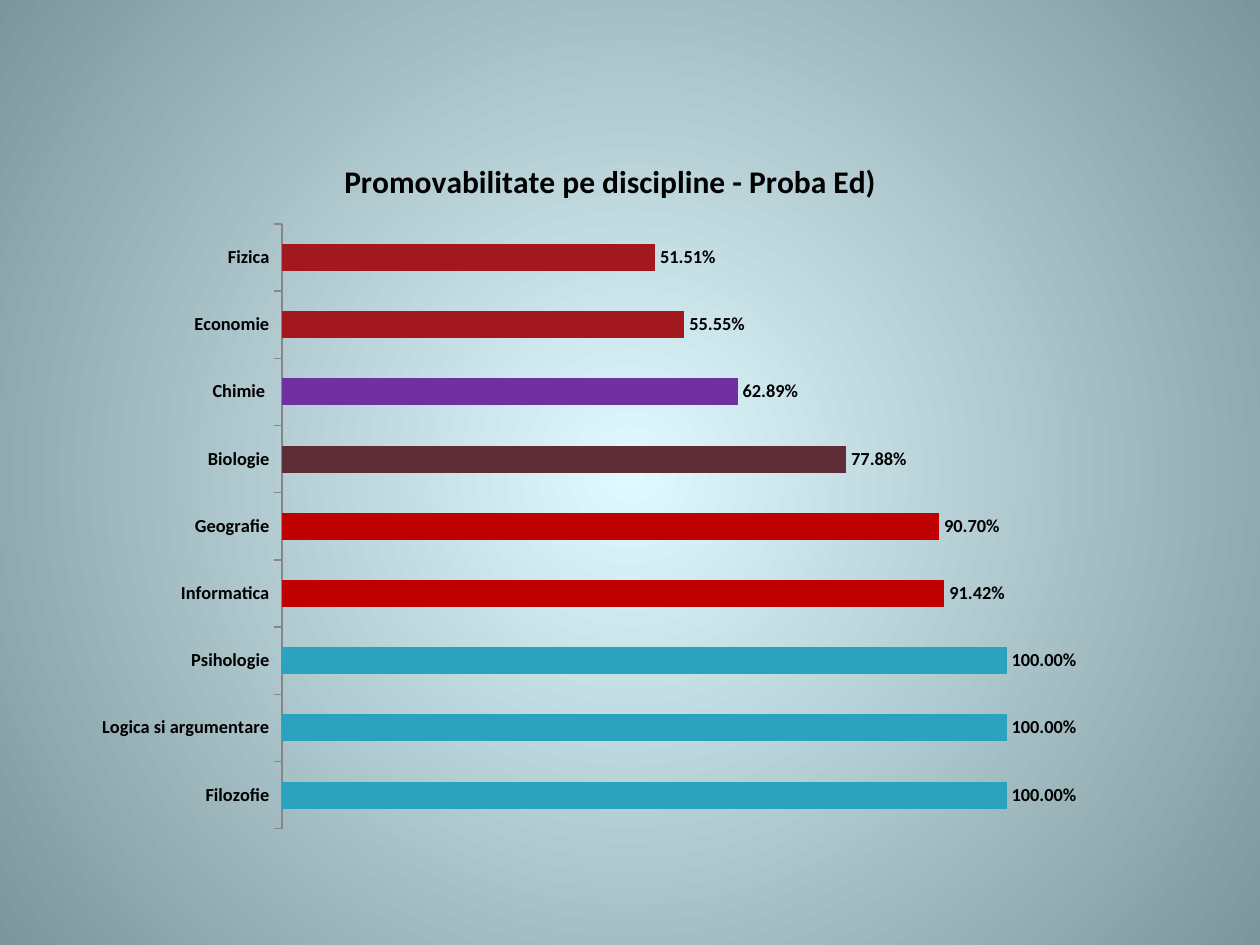
import pptx
import pptx.chart.data
import pptx.dml.color
import pptx.enum.chart
import pptx.oxml
import pptx.oxml.ns
import pptx.util
from dataclasses import dataclass

Pt = pptx.util.Pt
qn = pptx.oxml.ns.qn


def rgb(value):
    return pptx.dml.color.RGBColor.from_string(value)


@dataclass(frozen=True)
class Theme:
    font: str = "Calibri"
    text: str = "000000"
    axis: str = "868686"
    glow: str = "E1FAFF"
    edge: str = "7B969C"
    teal: str = "2DA2BF"
    red: str = "C00000"
    maroon: str = "5E2D37"
    purple: str = "7030A0"
    crimson: str = "A3171E"
    base_size: float = 10
    label_size: float = 10.5
    title_size: float = 18


class SlideBuilder:
    def __init__(self, prs, theme):
        self.theme = theme
        self.s = prs.slides.add_slide(prs.slide_layouts[6])

    def background(self):
        fill = self.s.background.fill
        fill.gradient()
        for stop, color in zip(fill.gradient_stops, (self.theme.glow, self.theme.edge)):
            stop.color.rgb = rgb(color)
        grad = self.s.element.find(".//" + qn("a:gradFill"))
        radial = pptx.oxml.parse_xml(
            f'<a:path {pptx.oxml.ns.nsdecls("a")} path="circle">'
            '<a:fillToRect l="50000" t="50000" r="50000" b="50000"/></a:path>'
        )
        grad.replace(grad.find(qn("a:lin")), radial)

    def style_font(self, font, size, bold=True):
        font.name = self.theme.font
        font.size = Pt(size)
        font.bold = bold
        font.color.rgb = rgb(self.theme.text)

    def set_layout(self, parent, index, **values):
        old = parent.find(qn("c:layout"))
        if old is not None:
            parent.remove(old)
        target = '<c:layoutTarget val="inner"/>' if "w" in values else ""
        modes = '<c:xMode val="edge"/><c:yMode val="edge"/>'
        sizes = "".join(f'<c:{key} val="{value}"/>' for key, value in values.items())
        parent.insert(index, pptx.oxml.parse_xml(
            f'<c:layout {pptx.oxml.ns.nsdecls("c")}><c:manualLayout>'
            f"{target}{modes}{sizes}</c:manualLayout></c:layout>"
        ))

    def bar_chart(self, title, rows, left, top, width, height):
        data = pptx.chart.data.CategoryChartData(number_format="0.00%")
        data.categories = [name for name, _, _ in rows]
        data.add_series("Series 1", [value for _, value, _ in rows])
        chart = self.s.shapes.add_chart(
            pptx.enum.chart.XL_CHART_TYPE.BAR_CLUSTERED,
            Pt(left), Pt(top), Pt(width), Pt(height), data,
        ).chart
        self.style_font(chart.font, self.theme.base_size, False)
        chart.has_legend = False
        self.chart_title(chart, title)
        self.axes(chart)
        self.bars(chart.plots[0], [color for _, _, color in rows])

    def chart_title(self, chart, title):
        chart.has_title = True
        tf = chart.chart_title.text_frame
        tf.text = title
        self.style_font(tf.paragraphs[0].runs[0].font, self.theme.title_size)
        element = chart.chart_title.element
        self.set_layout(element, 1, x=0.26, y=0.04)
        element.find(qn("c:overlay")).set("val", "1")
        area = element.getparent().find(qn("c:plotArea"))
        self.set_layout(area, 0, x=0.21, y=0.136, w=0.767, h=0.825)

    def axes(self, chart):
        cat, val = chart.category_axis, chart.value_axis
        cat.major_tick_mark = pptx.enum.chart.XL_TICK_MARK.OUTSIDE
        cat.format.line.color.rgb = rgb(self.theme.axis)
        cat.format.line.width = Pt(0.75)
        self.style_font(cat.tick_labels.font, self.theme.label_size)
        val.minimum_scale = 0
        val.maximum_scale = 1.2
        val.has_major_gridlines = False
        val.visible = False

    def bars(self, plot, colors):
        plot.gap_width = 150
        plot.vary_by_categories = False
        series = plot.series[0]
        series.format.fill.solid()
        series.format.fill.fore_color.rgb = rgb(self.theme.teal)
        for i, color in enumerate(colors):
            fill = series.points[i].format.fill
            fill.solid()
            fill.fore_color.rgb = rgb(color)
        labels = series.data_labels
        labels.show_value = True
        labels.number_format = "0.00%"
        labels.number_format_is_linked = False
        labels.position = pptx.enum.chart.XL_LABEL_POSITION.OUTSIDE_END
        self.style_font(labels.font, self.theme.label_size)


def main():
    prs = pptx.Presentation()
    prs.slide_width, prs.slide_height = Pt(720), Pt(540)
    theme = Theme()
    rows = [
        ("Filozofie", 1, theme.teal),
        ("Logica si argumentare", 1, theme.teal),
        ("Psihologie", 1, theme.teal),
        ("Informatica", 0.9142, theme.red),
        ("Geografie", 0.907, theme.red),
        ("Biologie", 0.7788, theme.maroon),
        ("Chimie ", 0.6289, theme.purple),
        ("Economie", 0.5555, theme.crimson),
        ("Fizica", 0.5151, theme.crimson),
    ]
    slide = SlideBuilder(prs, theme)
    slide.background()
    slide.bar_chart("Promovabilitate pe discipline - Proba Ed)", rows, 25, 71, 648, 419)
    prs.save("out.pptx")


if __name__ == "__main__":
    main()
